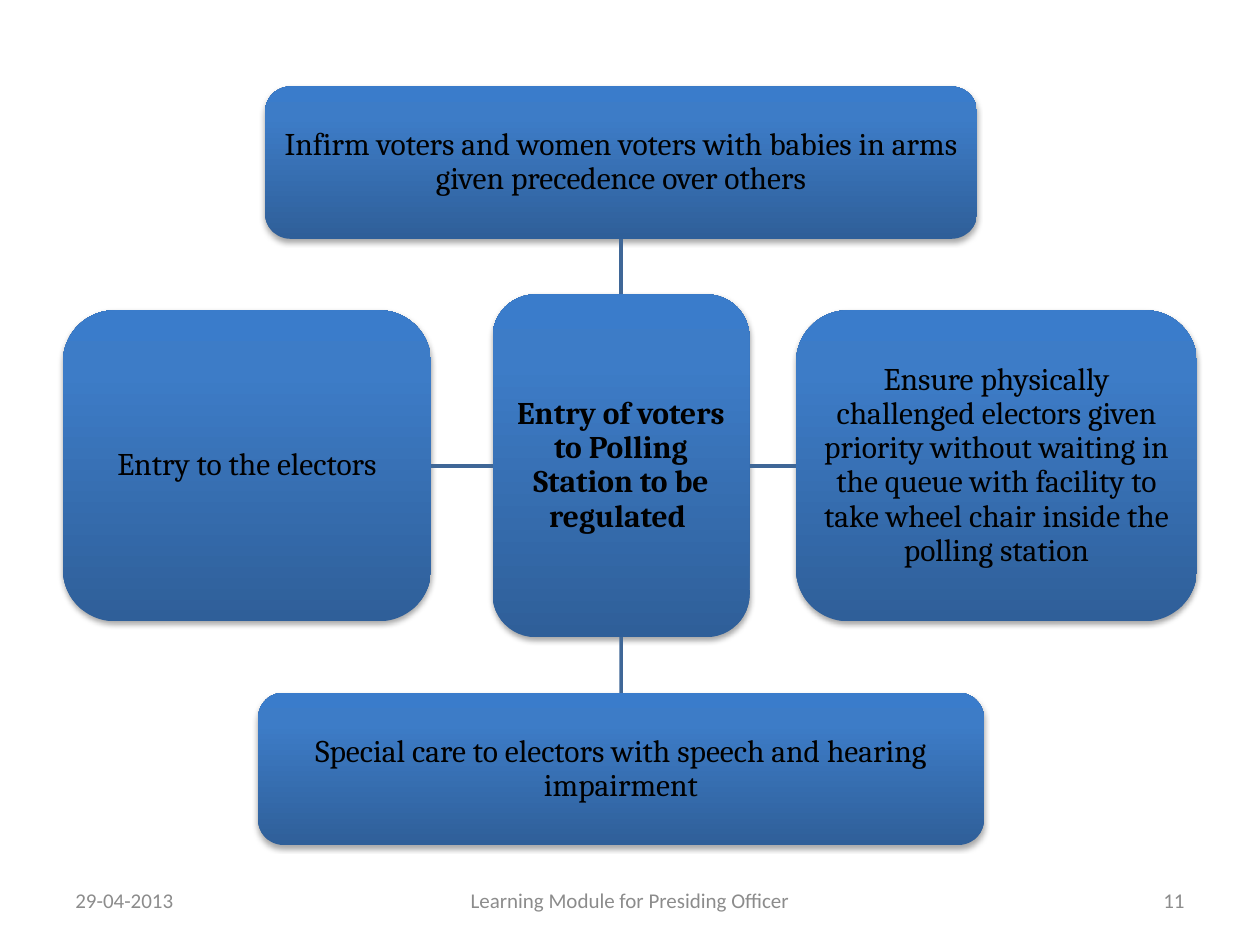
from copy import deepcopy
from dataclasses import dataclass

from lxml import etree
from pptx import Presentation
from pptx import util as u
from pptx.dml.color import RGBColor
from pptx.enum import shapes, text
from pptx.oxml import ns


@dataclass(frozen=True)
class Theme:
    """Colours, fonts and type sizes of the slide."""
    gradient: tuple = ((0, "2F5F99"), (0.8, "3D7CC7"), (1, "3A7CCB"))
    spoke: str = "3F6797"
    ink: str = "000000"
    muted: str = "8C8C8C"
    shadow: str = "000000"
    body_font: str = "Cambria"
    footer_font: str = "Calibri"
    body_size: int = 18
    footer_size: int = 12


THEME = Theme()
HUB_X, HUB_Y = 12.52, 9.39
ROW_STEP = 6.11
TOP, LEFT, BOTTOM, RIGHT = range(4)


def apply_format(target, values):
    """Set each attribute named in values on target."""
    for name, value in values.items():
        setattr(target, name, value)


def write_text(frame, wording, font, color, paragraph):
    """Fill a text frame with one formatted, vertically centred paragraph."""
    apply_format(frame, {"word_wrap": True, "vertical_anchor": text.MSO_ANCHOR.MIDDLE})
    line = frame.paragraphs[0]
    apply_format(line, paragraph)
    run = line.add_run()
    run.text = wording
    apply_format(run.font, font)
    run.font.color.rgb = RGBColor.from_string(color)


def paint_gradient(box):
    """Give a box the theme gradient, darkest at the bottom."""
    box.fill.gradient()
    box.fill.gradient_angle = 90
    stop_list = box.element.spPr.find(".//" + ns.qn("a:gsLst"))
    stop_list.append(deepcopy(stop_list[-1]))
    for stop, (position, color) in zip(box.fill.gradient_stops, THEME.gradient):
        stop.position = position
        stop.color.rgb = RGBColor.from_string(color)


def cast_shadow(box):
    """Add a soft shadow just below a box."""
    box.shadow.inherit = False
    effects = box.element.spPr.find(ns.qn("a:effectLst"))
    shadow = etree.SubElement(effects, ns.qn("a:outerShdw"), blurRad="40000",
                              dist="23000", dir="5400000", rotWithShape="0")
    color = etree.SubElement(shadow, ns.qn("a:srgbClr"), val=THEME.shadow)
    etree.SubElement(color, ns.qn("a:alpha"), val="35000")


def add_box(slide, wording, center, size, bold=False):
    """Add a rounded box around a centre point, in centimetres."""
    (x, y), (width, height) = center, size
    box = slide.shapes.add_shape(
        shapes.MSO_SHAPE.ROUNDED_RECTANGLE, u.Cm(x - width / 2),
        u.Cm(y - height / 2), u.Cm(width), u.Cm(height))
    paint_gradient(box)
    box.line.fill.background()
    cast_shadow(box)
    sides = ("left", "right", "top", "bottom")
    apply_format(box.text_frame, {f"margin_{side}": u.Cm(0.13) for side in sides})
    write_text(box.text_frame, wording,
               {"name": THEME.body_font, "size": u.Pt(THEME.body_size), "bold": bold},
               THEME.ink, {"alignment": text.PP_ALIGN.CENTER, "line_spacing": 0.9})
    return box


def add_spoke(slide, hub, hub_side, outer, outer_side):
    """Join the hub to an outer box with a straight line."""
    spoke = slide.shapes.add_connector(shapes.MSO_CONNECTOR.STRAIGHT, 0, 0, 0, 0)
    spoke.begin_connect(hub, hub_side)
    spoke.end_connect(outer, outer_side)
    spoke.line.color.rgb = RGBColor.from_string(THEME.spoke)
    spoke.line.width = u.Pt(2)
    etree.SubElement(spoke.element.spPr, ns.qn("a:effectLst"))


def add_footer(slide, wording, left, width, alignment):
    """Add one footer entry."""
    footer = slide.shapes.add_textbox(u.Cm(left), u.Cm(17.65), u.Cm(width), u.Cm(1.01))
    write_text(footer.text_frame, wording,
               {"name": THEME.footer_font, "size": u.Pt(THEME.footer_size)},
               THEME.muted, {"alignment": alignment})


def main():
    """Build the slide and save it."""
    deck = Presentation()
    apply_format(deck, {"slide_width": u.Cm(25.4), "slide_height": u.Cm(19.05)})
    slide = deck.slides.add_slide(deck.slide_layouts[6])

    hub = add_box(slide, "Entry of voters to Polling Station to be regulated ",
                  (HUB_X, HUB_Y), (5.18, 6.91), bold=True)
    rules = (
        ("Infirm voters and women voters with babies in arms given precedence over others",
         (HUB_X, HUB_Y - ROW_STEP), (14.35, 3.07), TOP, BOTTOM),
        ("Ensure physically challenged electors given priority without waiting in "
         "the queue with facility to take wheel chair inside the polling station",
         (20.09, HUB_Y), (8.08, 6.27), RIGHT, LEFT),
        ("Special care to electors with speech and hearing impairment",
         (HUB_X, HUB_Y + ROW_STEP), (14.63, 3.07), BOTTOM, TOP),
        ("Entry to the electors", (4.98, HUB_Y), (7.42, 6.27), LEFT, RIGHT),
    )
    for wording, center, size, hub_side, outer_side in rules:
        rule = add_box(slide, wording, center, size)
        add_spoke(slide, hub, hub_side, rule, outer_side)

    align = text.PP_ALIGN
    for entry in (("29-04-2013", 1.27, 5.93, align.LEFT),
                  ("Learning Module for Presiding Officer", 8.68, 8.04, align.CENTER),
                  ("11", 18.2, 5.93, align.RIGHT)):
        add_footer(slide, *entry)
    deck.save("out.pptx")


if __name__ == "__main__":
    main()
